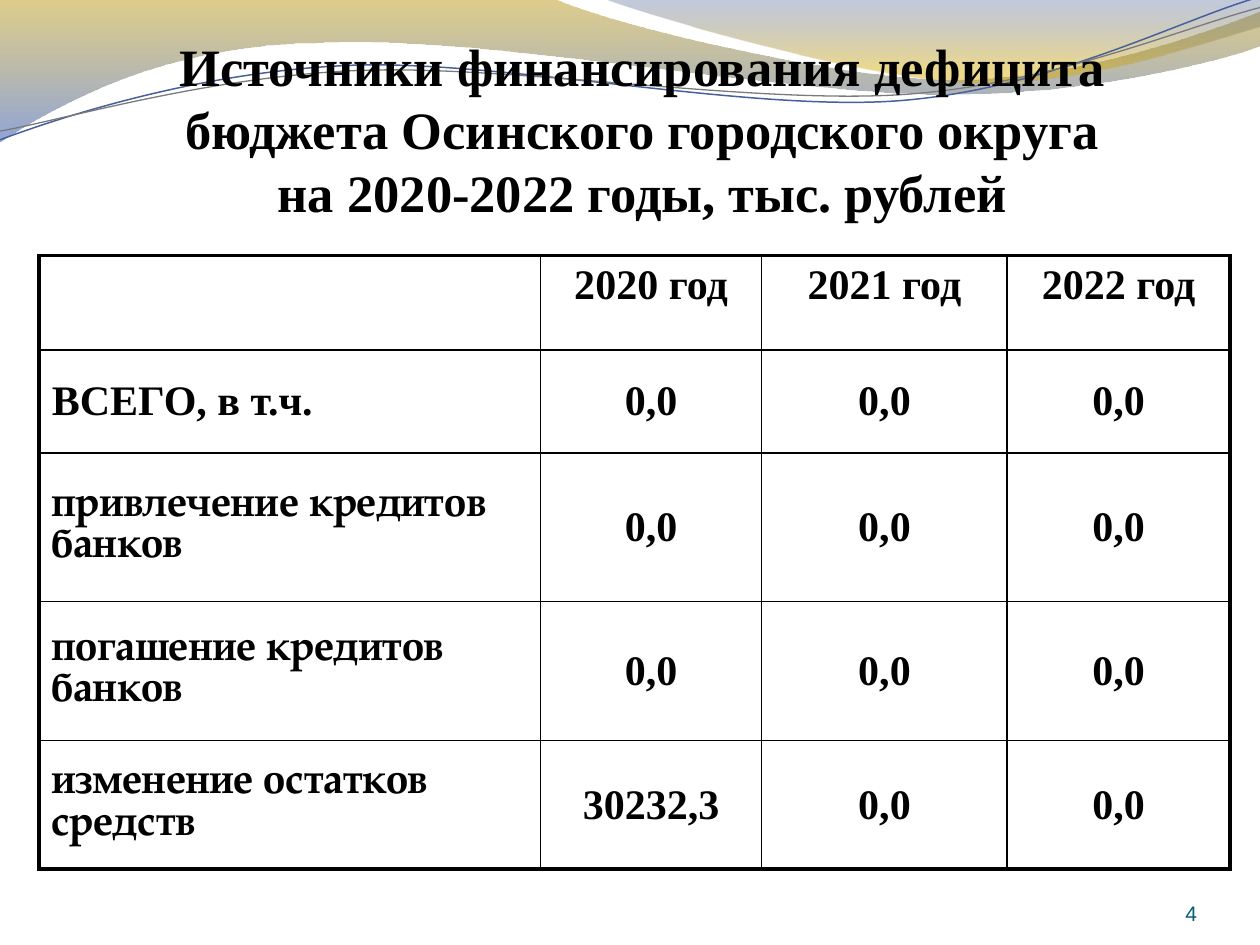
from lxml.etree import SubElement as Sub
from pptx import Presentation
from pptx.dml.color import RGBColor as RGB
from pptx.enum.text import MSO_ANCHOR as Anchor, PP_ALIGN as Align
from pptx.oxml.ns import qn
from pptx.util import Pt

BLACK = RGB(0x00, 0x00, 0x00)
TEAL = RGB(0x04, 0x5C, 0x75)
GOLD = RGB(0xB6, 0x90, 0x00)
AMBER = RGB(0xD9, 0xAC, 0x00)
BLUE = RGB(0x33, 0x59, 0xB7)
NAVY = RGB(0x32, 0x4C, 0x8D)
STEEL = RGB(0x48, 0x60, 0x9B)
GRAY = RGB(0x7A, 0x7A, 0x7A)
SERIF, BOOK, SANS = "Times New Roman", "TeX Gyre Pagella", "Arial"


class Page:
    thin, thick = 1, 2.25

    def __init__(self, deck):
        self.slide = deck.slides.add_slide(deck.slide_layouts[5])
        self.shapes = self.slide.shapes

    def style(self, par, size, font=SERIF, color=BLACK, bold=True, align=Align.CENTER):
        par.alignment = align
        face = par.font
        face.name, face.size, face.bold = font, Pt(size), bold
        face.color.rgb = color

    def outline(self, parts, closed):
        """Draw parts of two numbers (line end) or six (Bezier curve)."""
        pts = [(Pt(x), Pt(y)) for part in parts
               for x, y in zip(part[::2], part[1::2])]
        pen = self.shapes.build_freeform(*pts[0], scale=1.0)
        pen.add_line_segments(pts[1:], close=closed)
        shape = pen.convert_to_shape()
        shape.shadow.inherit = False
        # Join each three segments of a curve into one Bezier
        legs = iter(list(shape._element.spPr.iter(qn("a:lnTo"))))
        for part in parts[1:]:
            leg = next(legs)
            if len(part) == 6:
                bend = leg.makeelement(qn("a:cubicBezTo"))
                leg.addprevious(bend)
                for old in (leg, next(legs), next(legs)):
                    bend.append(old[0])
                    old.getparent().remove(old)
        return shape

    def wave(self, parts, stops):
        shape = self.outline(parts, True)
        shape.line.fill.background()
        shape.fill.gradient()
        shape.fill.gradient_angle = 270
        for stop, (place, color, _) in zip(shape.fill.gradient_stops, stops):
            stop.position = place
            stop.color.rgb = color
        tones = shape._element.spPr.iter(qn("a:srgbClr"))
        for tone, (_, _, alpha) in zip(list(tones), stops):
            Sub(tone, qn("a:alpha"), val=str(alpha * 1000))

    def curve(self, parts, color, width):
        shape = self.outline(parts, False)
        shape.fill.background()
        shape.line.color.rgb = color
        shape.line.width = Pt(width)

    def title(self, text, box):
        shape = self.shapes.title
        self.shapes._spTree.append(shape._element)  # in front of the waves
        shape.left, shape.top, shape.width, shape.height = map(Pt, box)
        frame = shape.text_frame
        frame.text = text
        frame.word_wrap = True
        frame.vertical_anchor = Anchor.BOTTOM
        frame.margin_left = frame.margin_right = frame.margin_bottom = 0
        self.style(frame.paragraphs[0], 30)

    def text(self, text, box):
        frame = self.shapes.add_textbox(*map(Pt, box)).text_frame
        frame.text = text
        frame.word_wrap = True
        frame.vertical_anchor = Anchor.BOTTOM
        frame.margin_left = frame.margin_right = 0
        frame.margin_top = frame.margin_bottom = 0
        self.style(frame.paragraphs[0], 12, SANS, TEAL, False, Align.RIGHT)

    def border(self, cell, edges):
        props = cell._tc.get_or_add_tcPr()
        for side, outer in edges.items():
            width = self.thick if outer else self.thin
            line = Sub(props, qn("a:ln" + side), w=str(Pt(width)))
            Sub(Sub(line, qn("a:solidFill")), qn("a:srgbClr"), val=str(BLACK))

    def table(self, rows, left, top, wides, highs):
        grid = self.shapes.add_table(len(highs), len(wides), Pt(left), Pt(top),
                                     Pt(sum(wides)), Pt(sum(highs))).table
        grid.first_row = grid.horz_banding = False
        for col, wide in zip(grid.columns, wides):
            col.width = Pt(wide)
        for row, high in zip(grid.rows, highs):
            row.height = Pt(high)
        for r, row in enumerate(rows):
            for c, text in enumerate(row):
                cell = grid.cell(r, c)
                cell.text = text
                cell.vertical_anchor = Anchor.MIDDLE if r else Anchor.TOP
                self.style(cell.text_frame.paragraphs[0], 24,
                           BOOK if r > 1 and c == 0 else SERIF,
                           align=Align.CENTER if c else Align.LEFT)
                self.border(cell, {"L": c == 0, "R": c == len(wides) - 1,
                                   "T": r == 0, "B": r == len(highs) - 1})
                cell.fill.background()


def main():
    deck = Presentation()
    deck.slide_width, deck.slide_height = Pt(720), Pt(540)
    page = Page(deck)

    # Waves along the top edge
    page.wave([(0, -0.7), (316.8, -0.7), (342.7, 12.2, 478.1, 45.4, 545.8, 45.4),
               (614.2, 45.4, 689.8, 18.7, 720, 6.5), (720.7, 25.9),
               (707.8, 31.7, 626.4, 54.7, 537.1, 54),
               (447.8, 54, 275, 20.2, 185, 24.5),
               (92.9, 25.2, 33.1, 59.8, -0.7, 81.4)],
              [(0, GOLD, 45), (1, BLUE, 55)])
    page.wave([(344.9, -0.7), (366.5, 7.9, 491, 44.6, 553.7, 46.8),
               (616.3, 49.7, 691.9, 23, 720, 15.1), (720, 0)],
              [(0, NAVY, 30), (0.8, AMBER, 45)])
    page.curve([(0, 79.9), (34.6, 67, 113.8, 41, 199.4, 37.4),
                (284.4, 33.8, 427, 64.1, 513.4, 57.6),
                (599.8, 51.1, 675.4, 10.8, 718.6, -1.4)], STEEL, 0.85)
    page.curve([(0, 74.9), (33.8, 69.1, 118.1, 43.9, 203.8, 40.3),
                (290.2, 36.7, 429.8, 59.8, 516.2, 54),
                (601.9, 48.2, 677.5, 15.1, 720, 4.3)], GRAY, 0.75)

    # Table of funding sources
    zero = "0,0"
    page.table([["", "2020 год", "2021 год", "2022 год"],
                ["ВСЕГО, в т.ч.", zero, zero, zero],
                ["привлечение кредитов банков", zero, zero, zero],
                ["погашение кредитов банков", zero, zero, zero],
                ["изменение остатков средств", "30232,3", zero, zero]],
               22.4, 146, [286.4, 126.5, 140.3, 127.3], [54, 58.8, 85, 79.4, 73.4])

    # Page number and title
    page.text("4", (624, 500.2, 60, 28.8))
    page.title("Источники финансирования дефицита бюджета Осинского городского "
               "округа\vна 2020-2022 годы, тыс. рублей", (65.2, 9.5, 604, 118))

    deck.save("out.pptx")


if __name__ == "__main__":
    main()
